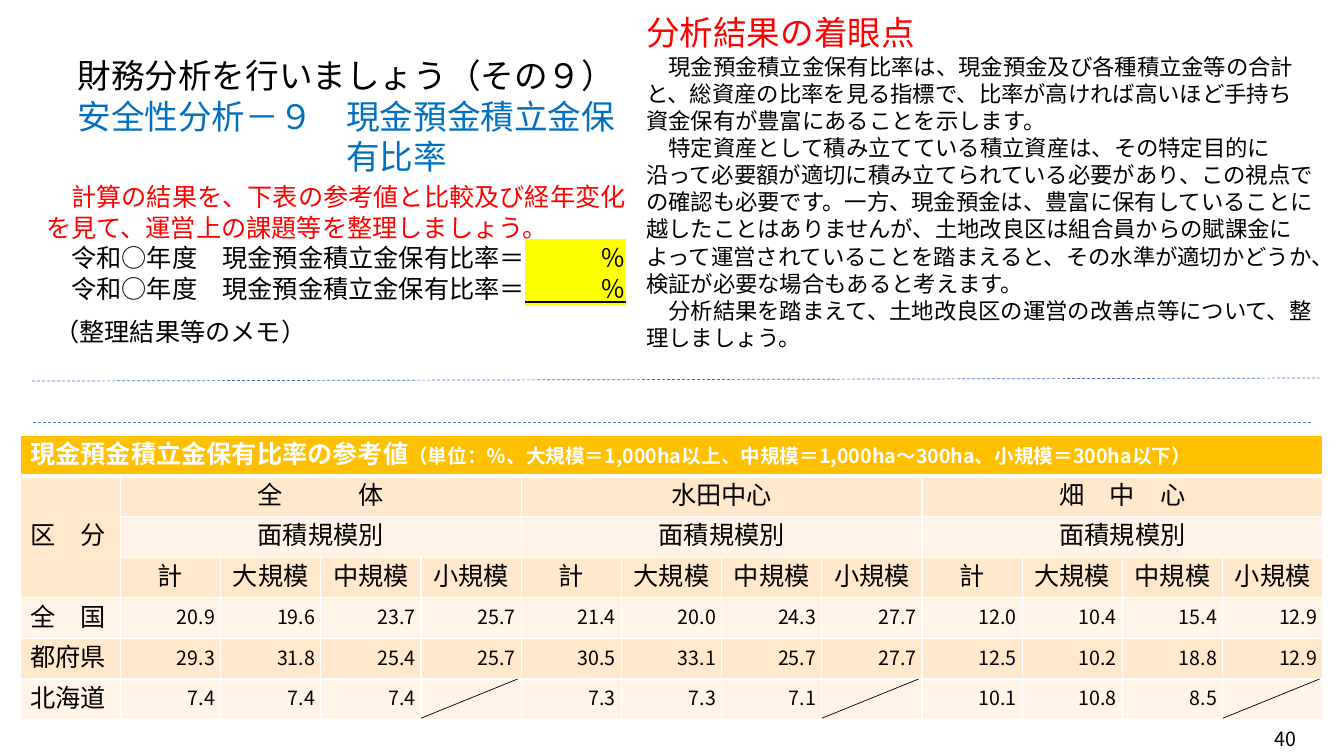
from lxml import etree
from pptx import Presentation
from pptx.dml.color import RGBColor
from pptx.enum.dml import MSO_LINE
from pptx.enum.shapes import MSO_CONNECTOR
from pptx.enum.text import MSO_ANCHOR, MSO_AUTO_SIZE, PP_ALIGN
from pptx.oxml.ns import qn
from pptx.util import Pt

FONT = "Noto Sans CJK JP"
LINE_FACTOR = 1.21
BLACK = RGBColor(0x00, 0x00, 0x00)
WHITE = RGBColor(0xFF, 0xFF, 0xFF)
RED = RGBColor(0xFF, 0x00, 0x00)
BLUE = RGBColor(0x00, 0x70, 0xC0)
YELLOW = RGBColor(0xFF, 0xFF, 0x00)
MEMO_LINE = RGBColor(0x44, 0x72, 0xC4)
GOLD = RGBColor(0xFF, 0xC0, 0x00)
BANDS = (RGBColor(0xFF, 0xF4, 0xE7), RGBColor(0xFF, 0xE8, 0xCC))

TABLE_LEFT, TABLE_TOP = 14.4, 311
COLUMN_WIDTH, ROW_HEIGHT = 71.6, 29
GROUPS = ("全　　　体", "水田中心", "畑　中　心")
SCALES = ("計", "大規模", "中規模", "小規模")
RATIOS = (
    ("全　国", ("20.9", "19.6", "23.7", "25.7", "21.4", "20.0",
               "24.3", "27.7", "12.0", "10.4", "15.4", "12.9")),
    ("都府県", ("29.3", "31.8", "25.4", "25.7", "30.5", "33.1",
               "25.7", "27.7", "12.5", "10.2", "18.8", "12.9")),
    ("北海道", ("7.4", "7.4", "7.4", None, "7.3", "7.3",
               "7.1", None, "10.1", "10.8", "8.5", None)),
)
COMMENTS = (
    "　現金預金積立金保有比率は、現金預金及び各種積立金等の合計と、総資産の比率を見る指標で、"
    "比率が高ければ高いほど手持ち資金保有が豊富にあることを示します。",
    "　特定資産として積み立てている積立資産は、その特定目的に沿って必要額が適切に積み立てられて"
    "いる必要があり、この視点での確認も必要です。一方、現金預金は、豊富に保有していることに"
    "越したことはありませんが、土地改良区は組合員からの賦課金によって運営されていることを"
    "踏まえると、その水準が適切かどうか、検証が必要な場合もあると考えます。",
    "　分析結果を踏まえて、土地改良区の運営の改善点等について、整理しましょう。",
)


def add_span(para, text, size, color=BLACK, bold=False, highlight=None):
    """Add a run; a highlighted run is also underlined."""
    span = para.add_run()
    span.text = text
    font = span.font
    font.size, font.bold = Pt(size), bold
    font.color.rgb = color
    properties = font._element
    if highlight is not None:
        font.underline = True
        mark = etree.SubElement(properties, qn("a:highlight"))
        etree.SubElement(mark, qn("a:srgbClr"), val=str(highlight))
    font.name = FONT
    etree.SubElement(properties, qn("a:ea"), typeface=FONT)


def format_para(para, size, align=PP_ALIGN.LEFT, indent=0):
    para.alignment = align
    para.line_spacing = Pt(size * LINE_FACTOR)
    para.space_before = para.space_after = Pt(0)
    properties = para._p.get_or_add_pPr()
    properties.set("marL", str(Pt(indent)))
    properties.set("indent", "0")
    etree.SubElement(properties, qn("a:buNone"))


def add_lines(frame, lines, size, align=PP_ALIGN.LEFT):
    """Append paragraphs, each given as (text, colour)."""
    for text, color in lines:
        para = next_para(frame)
        format_para(para, size, align)
        add_span(para, text, size, color)


def next_para(frame):
    first = frame.paragraphs[0]
    return frame.add_paragraph() if first.runs else first


def place(box, left, top, width, height):
    """Position a text shape and return its wrapped, top-anchored frame."""
    box.left, box.top, box.width, box.height = map(Pt, (left, top, width, height))
    frame = box.text_frame
    frame.word_wrap = True
    frame.auto_size = MSO_AUTO_SIZE.NONE
    frame.vertical_anchor = MSO_ANCHOR.TOP
    return frame


def add_box(page, left, top, width, height):
    return place(page.shapes.add_textbox(0, 0, 0, 0), left, top, width, height)


def add_line(page, x1, y1, x2, y2, color, dash=None):
    line = page.shapes.add_connector(
        MSO_CONNECTOR.STRAIGHT, Pt(x1), Pt(y1), Pt(x2), Pt(y2))
    line.line.color.rgb = color
    line.line.width = Pt(0.5)
    line.line.dash_style = dash
    etree.SubElement(line._element.spPr, qn("a:effectLst"))


def style_cell(cell, fill, bottom=1):
    """Give a cell white borders and a solid fill."""
    properties = cell._tc.get_or_add_tcPr()
    for side, width in (("L", 1), ("R", 1), ("T", 1), ("B", bottom)):
        border = etree.SubElement(properties, qn("a:ln" + side), w=str(Pt(width)))
        paint = etree.SubElement(border, qn("a:solidFill"))
        etree.SubElement(paint, qn("a:srgbClr"), val=str(WHITE))
    cell.fill.solid()
    cell.fill.fore_color.rgb = fill


def write_cell(cell, text, align=PP_ALIGN.CENTER, size=18):
    add_lines(cell.text_frame, [(text, BLACK)], size, align)


def write_number(cell, text):
    cell.vertical_anchor = MSO_ANCHOR.MIDDLE
    cell.margin_left = cell.margin_top = Pt(0.7)
    cell.margin_right, cell.margin_bottom = Pt(4), Pt(0)
    if text:
        write_cell(cell, text, PP_ALIGN.RIGHT, 14)


def add_ratio_table(page):
    rows, columns = 4 + len(RATIOS), 1 + len(GROUPS) * len(SCALES)
    table = page.shapes.add_table(
        rows, columns, Pt(TABLE_LEFT), Pt(TABLE_TOP),
        Pt(COLUMN_WIDTH * columns), Pt(ROW_HEIGHT * rows)).table
    table.first_row = table.horz_banding = False
    for column in table.columns:
        column.width = Pt(COLUMN_WIDTH)
    for number, row in enumerate(table.rows):
        row.height = Pt(ROW_HEIGHT)
        for cell in row.cells:
            if number == 0:
                style_cell(cell, GOLD, bottom=3)
            else:
                style_cell(cell, BANDS[number % 2])

    table.cell(0, 0).merge(table.cell(0, columns - 1))
    heading = table.cell(0, 0).text_frame.paragraphs[0]
    format_para(heading, 18)
    add_span(heading, "現金預金積立金保有比率の参考値", 18, WHITE, bold=True)
    add_span(heading, "（単位：％、大規模＝1,000ha以上、中規模＝1,000ha～300ha、"
             "小規模＝300ha以下）", 14, WHITE, bold=True)

    table.cell(1, 0).merge(table.cell(3, 0))
    table.cell(1, 0).vertical_anchor = MSO_ANCHOR.MIDDLE
    write_cell(table.cell(1, 0), "区　分", PP_ALIGN.LEFT)
    for index, group in enumerate(GROUPS):
        start = 1 + index * len(SCALES)
        for row, text in ((1, group), (2, "面積規模別")):
            table.cell(row, start).merge(table.cell(row, start + len(SCALES) - 1))
            write_cell(table.cell(row, start), text)
        for offset, scale in enumerate(SCALES):
            write_cell(table.cell(3, start + offset), scale)

    for row, (region, values) in enumerate(RATIOS, start=4):
        write_cell(table.cell(row, 0), region, PP_ALIGN.LEFT)
        for column, value in enumerate(values, start=1):
            write_number(table.cell(row, column), value)


def add_no_data_lines(page):
    """Strike a diagonal through every cell without a value."""
    for row, (_, values) in enumerate(RATIOS, start=4):
        top = TABLE_TOP + row * ROW_HEIGHT
        for column, value in enumerate(values, start=1):
            if value is None:
                left = TABLE_LEFT + column * COLUMN_WIDTH
                add_line(page, left, top + 28, left + 69, top, BLACK)


def main():
    deck = Presentation()
    deck.slide_width, deck.slide_height = Pt(960), Pt(540)
    page = deck.slides.add_slide(deck.slide_layouts[1])

    title = place(page.shapes.title, 48.2, 35.3, 404.6, 94.3)
    add_lines(title, [("財務分析を行いましょう（その９）", BLACK),
                      ("安全性分析－９　現金預金積立金保", BLUE),
                      ("有比率", BLUE)], 24)
    title.paragraphs[2]._p.pPr.set("marL", str(Pt(8 * 24)))

    task = add_box(page, 25.9, 126, 430.6, 94.3)
    add_lines(task, [("　計算の結果を、下表の参考値と比較及び経年変化を見て、"
                      "運営上の課題等を整理しましょう。", RED)], 18)
    for _ in range(2):
        para = next_para(task)
        format_para(para, 18)
        add_span(para, "　令和○年度　現金預金積立金保有比率＝", 18)
        add_span(para, "　　　％", 18, highlight=YELLOW)

    add_ratio_table(page)

    viewpoint = place(page.placeholders[1], 454.3, 5, 491.8, 249.8)
    add_lines(viewpoint, [("分析結果の着眼点", RED)], 24)
    add_lines(viewpoint, [(text, BLACK) for text in COMMENTS], 16)

    add_line(page, 23, 272.2, 942.5, 270, MEMO_LINE, MSO_LINE.DASH)
    add_line(page, 23.8, 301.7, 936.7, 301.7, MEMO_LINE, MSO_LINE.DASH)
    memo = add_box(page, 31.7, 222.5, 199.4, 28.8)
    add_lines(memo, [("（整理結果等のメモ）", BLACK)], 18)
    add_no_data_lines(page)
    page_number = add_box(page, 871.2, 515.5, 61.9, 24.5)
    add_lines(page_number, [("40", BLACK)], 14, PP_ALIGN.RIGHT)
    deck.save("out.pptx")


if __name__ == "__main__":
    main()
